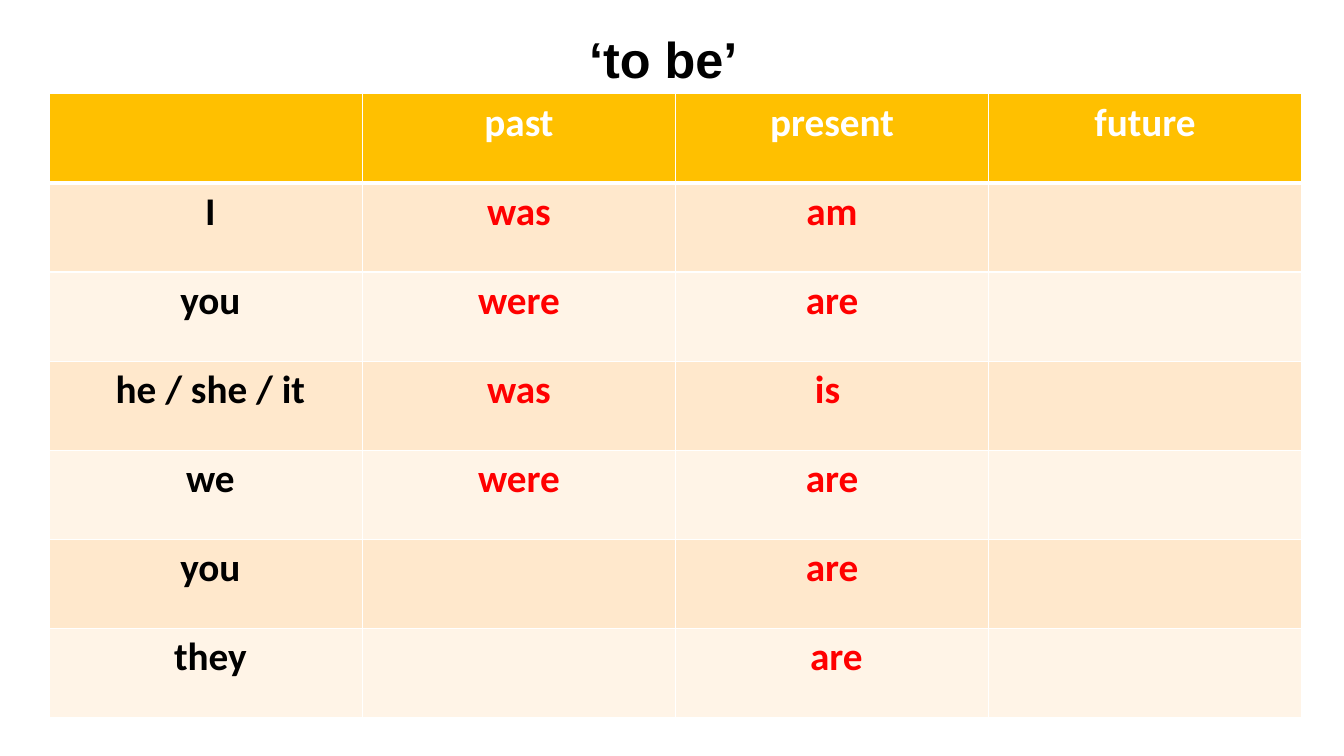
from dataclasses import dataclass

from lxml.etree import SubElement
from pptx import Presentation
from pptx.dml.color import RGBColor
from pptx.enum.text import MSO_ANCHOR, MSO_AUTO_SIZE, PP_ALIGN
from pptx.oxml.ns import qn
from pptx.util import Inches, Pt


@dataclass(frozen=True)
class Theme:
    title_font: str = "Arial"
    table_font: str = "Calibri"
    title_size: int = 36
    table_size: int = 28
    ink: str = "000000"
    verb: str = "FF0000"
    white: str = "FFFFFF"
    header_fill: str = "FFC000"
    band_fills: tuple = ("FFE8CC", "FFF4E7")
    thin_border: int = 1
    thick_border: int = 3


THEME = Theme()

CONJUGATION = [
    ("", "past", "present", "future"),
    (" I", "was", "am", ""),
    (" you", "were", "are", ""),
    (" he / she / it", "was", "is ", ""),
    (" we", "were", "are", ""),
    (" you", "", "are", ""),
    (" they", "", " are", ""),
]


def format_paragraph(paragraph, font_name, size, color):
    paragraph.alignment = PP_ALIGN.CENTER
    paragraph.font.name = font_name
    paragraph.font.size = Pt(size)
    paragraph.font.bold = True
    paragraph.font.color.rgb = RGBColor.from_string(color)


def add_title(slide, text, left, top, width, height):
    title = slide.shapes.title
    title.left, title.top, title.width, title.height = left, top, width, height
    frame = title.text_frame
    frame.text = text
    frame.word_wrap = True
    frame.auto_size = MSO_AUTO_SIZE.SHAPE_TO_FIT_TEXT
    frame.vertical_anchor = MSO_ANCHOR.TOP
    paragraph = frame.paragraphs[0]
    paragraph.line_spacing = 1.0
    format_paragraph(paragraph, THEME.title_font, THEME.title_size, THEME.ink)


def set_borders(cell, top_width, bottom_width):
    """Draw white lines on all four sides; call before the cell is filled."""
    properties = cell._tc.get_or_add_tcPr()
    thin = THEME.thin_border
    sides = {"a:lnL": thin, "a:lnR": thin, "a:lnT": top_width, "a:lnB": bottom_width}
    for tag, width in sides.items():
        line = SubElement(properties, qn(tag), w=str(Pt(width)))
        fill = SubElement(line, qn("a:solidFill"))
        SubElement(fill, qn("a:srgbClr"), val=THEME.white)


def cell_colors(row, column):
    """Return the fill and text colours for a place in the table."""
    if row == 0:
        return THEME.header_fill, THEME.white
    band = THEME.band_fills[(row - 1) % len(THEME.band_fills)]
    return band, THEME.ink if column == 0 else THEME.verb


def add_conjugation_table(slide, rows, left, top, width, height):
    column_count = len(rows[0])
    table = slide.shapes.add_table(
        len(rows), column_count, left, top, width, height
    ).table
    table.horz_banding = False
    for row, words in enumerate(rows):
        for column, word in enumerate(words):
            cell = table.cell(row, column)
            fill, color = cell_colors(row, column)
            set_borders(
                cell,
                THEME.thick_border if row == 1 else THEME.thin_border,
                THEME.thick_border if row == 0 else THEME.thin_border,
            )
            cell.fill.solid()
            cell.fill.fore_color.rgb = RGBColor.from_string(fill)
            if word:
                cell.text = word
                format_paragraph(
                    cell.text_frame.paragraphs[0],
                    THEME.table_font, THEME.table_size, color,
                )


def main():
    presentation = Presentation()
    presentation.slide_width = Inches(13.33)
    presentation.slide_height = Inches(7.5)
    title_only = presentation.slide_layouts.get_by_name("Title Only")
    slide = presentation.slides.add_slide(title_only)
    add_title(
        slide, " ‘to be’",
        Inches(3.88), Inches(0.23), Inches(5.26), Inches(0.71),
    )
    add_conjugation_table(
        slide, CONJUGATION,
        Inches(0.49), Inches(0.93), Inches(12.42), Inches(6.19),
    )
    presentation.save("out.pptx")


if __name__ == "__main__":
    main()
